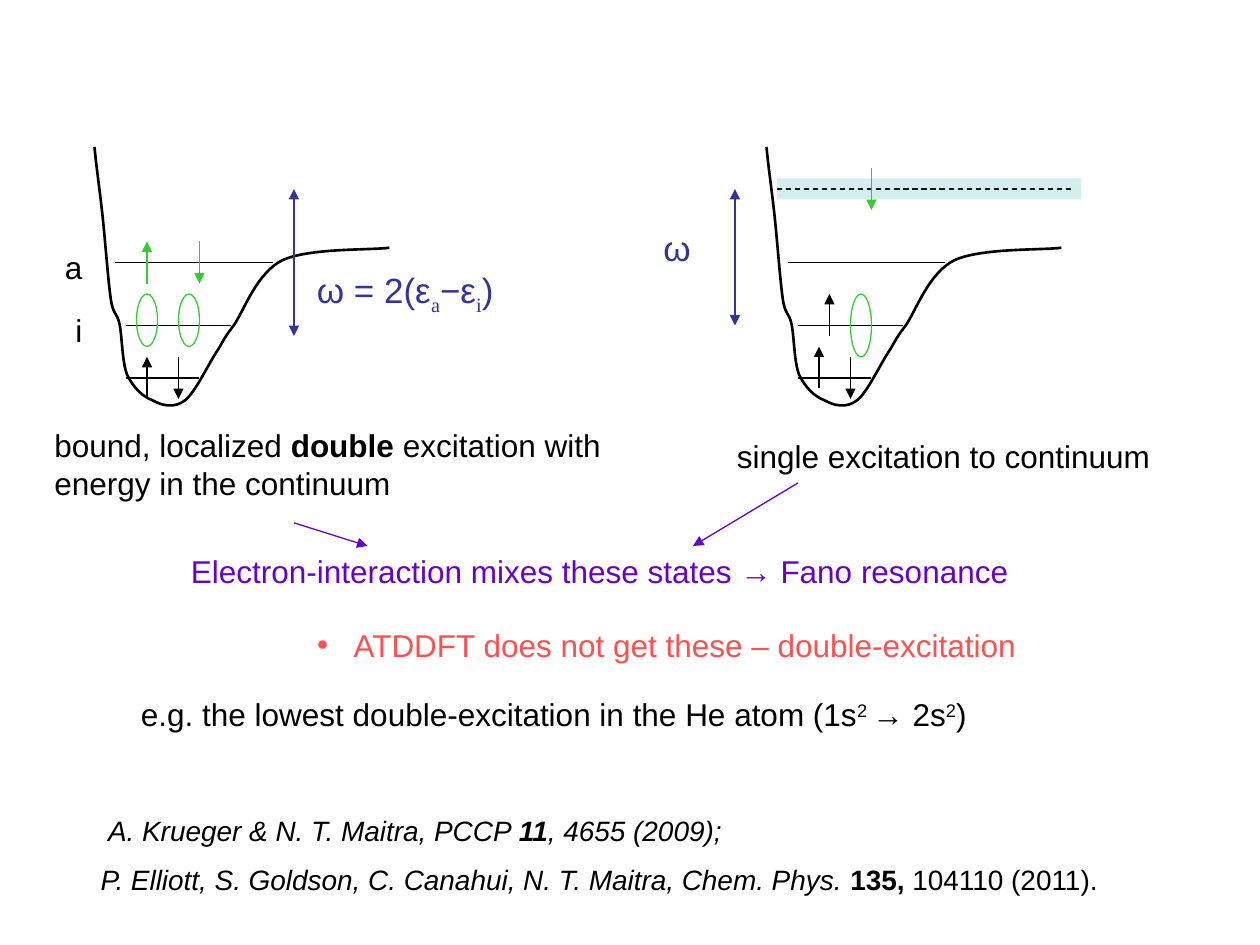
from pptx import Presentation
from pptx.dml.color import RGBColor
from pptx.enum.dml import MSO_LINE
from pptx.enum.shapes import MSO_CONNECTOR, MSO_SHAPE
from pptx.oxml import parse_xml
from pptx.oxml.ns import nsdecls, qn
from pptx.util import Inches, Pt

BLACK = RGBColor(0x00, 0x00, 0x00)
GREEN = RGBColor(0x33, 0xCC, 0x33)
BLUE = RGBColor(0x33, 0x33, 0x99)
VIOLET = RGBColor(0x66, 0x00, 0xCC)
CORAL = RGBColor(0xFF, 0x50, 0x50)
TEAL = RGBColor(0x00, 0x99, 0x99)

CURVE = [
    (2, 20), (5, 40), (7, 60), (9, 80), (11, 107), (13, 121),
    (15, 134), (18, 131), (20, 141), (22, 151), (22, 171), (26, 181),
    (31, 191), (38, 198), (46, 201), (53, 205), (63, 208), (72, 201),
    (80, 195), (91, 171), (98, 161), (104, 151), (102, 153), (111, 141),
    (119, 129), (129, 100), (149, 90), (170, 80), (220, 82), (234, 80),
]
LEVELS = [(12, 19, 36), (11, 26, 25), (12, 22, 31)]
BOLD = {"bold": True}
SLANT = {"italic": True}
SUB = {"base": -25, "face": "Times New Roman"}
SUPER = {"base": 30}


def grid(*cells):
    """Turn grid cells of a twelfth of an inch into lengths."""
    return [Inches(cell / 12) for cell in cells]


def line(slide, start, end, color=BLACK, head=False, tail=False):
    """Draw a thin straight line with optional arrowheads."""
    link = slide.shapes.add_connector(
        MSO_CONNECTOR.STRAIGHT, *grid(*start, *end))
    link.line.color.rgb = color
    link.line.width = Pt(0.75)
    stroke = link.line._get_or_add_ln()
    for tag, on in (("headEnd", head), ("tailEnd", tail)):
        if on:
            stroke.append(parse_xml(
                f'<a:{tag} {nsdecls("a")} type="triangle"/>'))
    link._element.spPr.append(parse_xml(f'<a:effectLst {nsdecls("a")}/>'))
    return link


def spin(slide, col, row, up, color=BLACK):
    """Draw an electron arrow four rows long from its top row."""
    ends = [(col, row), (col, row + 4)]
    if up:
        ends.reverse()
    line(slide, *ends, color, tail=True)


def hole(slide, col, row, rows):
    """Draw the ring left by an excited electron."""
    ring = slide.shapes.add_shape(MSO_SHAPE.OVAL, *grid(col, row, 2, rows))
    ring.shadow.inherit = False
    ring.fill.background()
    ring.line.color.rgb = GREEN
    ring.line.width = Pt(0.75)


def well(slide, col):
    """Draw a potential well with its energy levels."""
    pen = slide.shapes.build_freeform(0, 0, scale=Inches(0.01))
    pen.add_line_segments(CURVE, close=False)
    shape = pen.convert_to_shape(*grid(col + 9, 14))
    shape.shadow.inherit = False
    shape.fill.background()
    shape.line.color.rgb = BLACK
    shape.line.width = Pt(1.5)
    trace = shape._element.find(".//" + qn("a:path"))
    steps = trace.findall(qn("a:lnTo"))
    for first in range(0, len(steps), 3):
        bend = parse_xml(f'<a:cubicBezTo {nsdecls("a")}/>')
        for step in steps[first:first + 3]:
            bend.append(step[0])
            trace.remove(step)
        trace.append(bend)
    for left, right, row in LEVELS:
        line(slide, (col + left, row), (col + right, row))


def band(slide, col, row, cols, rows):
    """Draw the see-through continuum band."""
    strip = slide.shapes.add_shape(
        MSO_SHAPE.RECTANGLE, *grid(col, row, cols, rows))
    strip.shadow.inherit = False
    strip.line.fill.background()
    strip.fill.solid()
    strip.fill.fore_color.rgb = TEAL
    tint = strip._element.spPr.find(".//" + qn("a:srgbClr"))
    tint.append(parse_xml(f'<a:alpha {nsdecls("a")} val="17000"/>'))
    return strip


def style(run, size, color, face="Arial", base=0, bold=False, italic=False):
    """Format one run."""
    font = run.font
    font.name, font.size, font.color.rgb = face, Pt(size), color
    font.bold, font.italic = bold, italic
    if base:
        font._element.set("baseline", str(base * 1000))


def fill(para, parts, size, color):
    """Fill a paragraph with plain strings and (string, format) pairs."""
    for part in parts:
        text, form = (part, {}) if isinstance(part, str) else part
        run = para.add_run()
        run.text = text
        style(run, size, color, **form)


def label(slide, place, *paras, size=18, color=BLACK):
    """Add a text box holding the given paragraphs."""
    box = slide.shapes.add_textbox(*grid(*place))
    frame = box.text_frame
    frame.word_wrap = True
    for count, parts in enumerate(paras):
        para = frame.add_paragraph() if count else frame.paragraphs[0]
        if count:
            para.space_before = Pt(size * 0.53)
        fill(para, parts, size, color)
    return box


def bullet(slide, place, text, color):
    """Set the body placeholder as a one-line list."""
    body = slide.placeholders[1]
    body.left, body.top, body.width, body.height = grid(*place)
    body.text_frame.text = text
    para = body.text_frame.paragraphs[0]
    para.space_before = Pt(0)
    props = para._p.get_or_add_pPr()
    props.set("marL", str(Inches(0.29)))
    props.set("indent", str(-Inches(0.29)))
    style(para.runs[0], 18, color)


def bound(slide):
    """Draw the double excitation on the left."""
    well(slide, 0)
    spin(slide, 14, 34, True)
    spin(slide, 17, 34, False)
    spin(slide, 14, 23, True, GREEN)
    spin(slide, 19, 23, False, GREEN)
    for col in (13, 17):
        hole(slide, col, 28, 5)
    line(slide, (28, 18), (28, 32), BLUE, head=True, tail=True)
    label(slide, (29, 25, 21, 5.2),
          ["ω = 2(ε", ("a", SUB), "−ε", ("i", SUB), ")"],
          size=20, color=BLUE)
    label(slide, (5, 23, 5, 4.8), ["a"])
    label(slide, (6, 29, 4, 4.8), ["i"])
    label(slide, (4, 40, 56, 8.4),
          ["bound, localized", (" double ", BOLD),
           "excitation with energy in the continuum"])


def free(slide):
    """Draw the single excitation on the right."""
    edge = line(slide, (74, 18), (102, 18))
    edge.line.dash_style = MSO_LINE.DASH
    well(slide, 64)
    spin(slide, 83, 16, False, GREEN)
    spin(slide, 78, 33, True)
    spin(slide, 79, 28, True)
    spin(slide, 81, 34, False)
    hole(slide, 81, 28, 6)
    line(slide, (70, 18), (70, 31), BLUE, head=True, tail=True)
    label(slide, (62, 21, 6, 5.2), ["ω"], size=20, color=BLUE)
    edge.begin_connect(band(slide, 74, 17, 29, 2), 1)
    label(slide, (69, 41, 45, 4.8), ["single excitation to continuum"])


def main():
    """Build and save the slide."""
    deck = Presentation()
    deck.slide_width, deck.slide_height = grid(120, 90)
    slide = deck.slides.add_slide(deck.slide_layouts[1])
    title = slide.shapes.title.element
    title.getparent().remove(title)
    bound(slide)
    free(slide)
    line(slide, (28, 49.8), (35, 52), VIOLET, tail=True)
    line(slide, (76, 46), (66, 52), VIOLET, tail=True)
    label(slide, (17, 52, 86, 4.8),
          ["Electron-interaction mixes these states → Fano resonance"],
          color=VIOLET)
    bullet(slide, (29, 59, 81.25, 4.8),
           "ATDDFT does not get these – double-excitation", CORAL)
    label(slide, (12.25, 65.65, 84, 4.8),
          ["e.g. the lowest double-excitation in the He atom (1s",
           ("2 ", SUPER), "→ 2s", ("2", SUPER), ")"])
    notes = label(
        slide, (8.4, 76.9, 111.6, 9.2),
        [("A. Krueger & N. T. Maitra, PCCP ", SLANT),
         ("11", BOLD | SLANT), (", 4655 (2009);", SLANT)],
        [("P. Elliott, S. Goldson, C. Canahui, N. T. Maitra, Chem. Phys. ",
          SLANT), ("135, ", BOLD), "104110 (2011)."],
        size=16)
    first = notes.text_frame.paragraphs[0]._p.get_or_add_pPr()
    first.set("indent", str(Inches(0.06)))
    deck.save("out.pptx")


if __name__ == "__main__":
    main()
